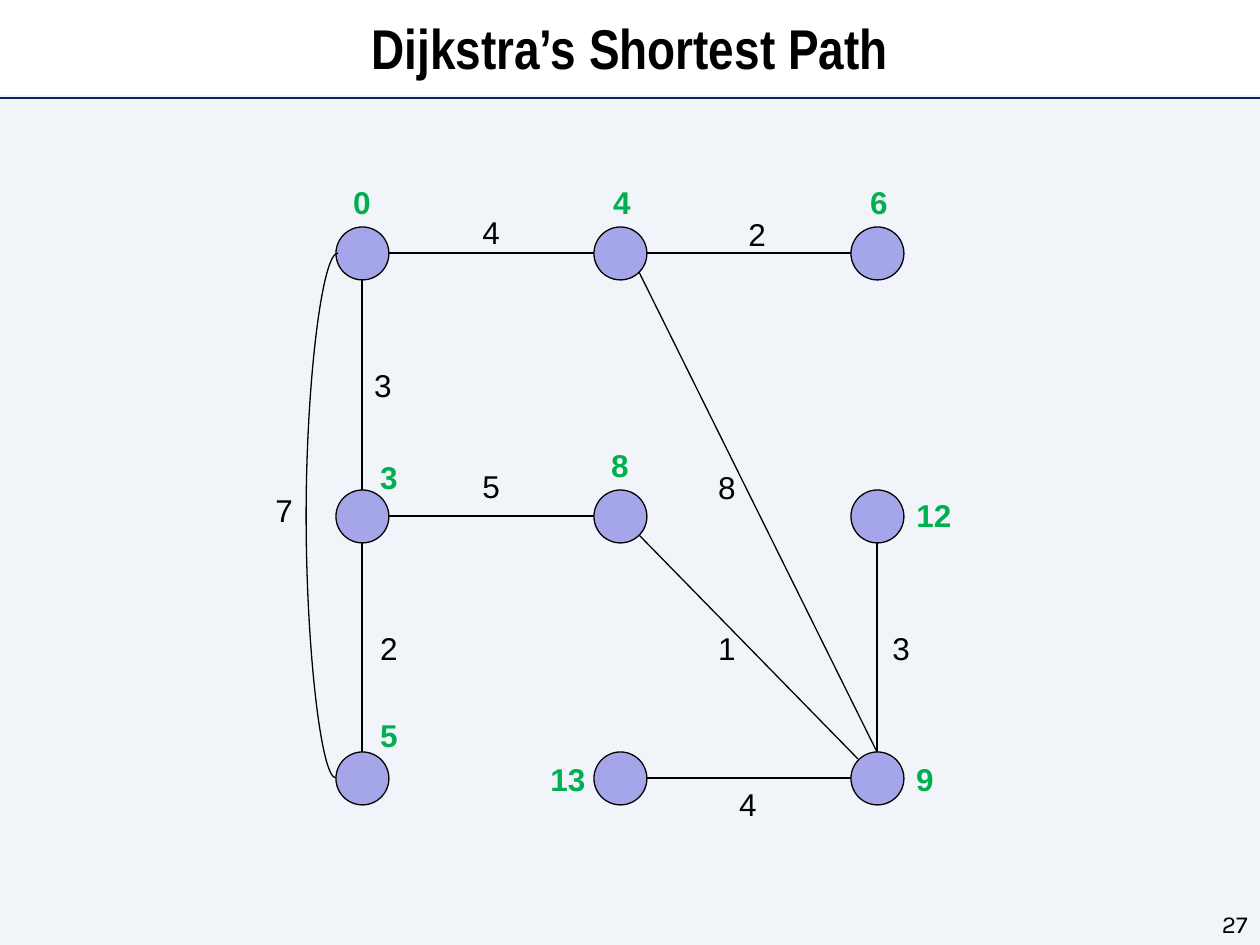
from dataclasses import dataclass

from lxml import etree
from pptx import Presentation
from pptx.dml.color import RGBColor
from pptx.enum.shapes import MSO_CONNECTOR, MSO_SHAPE
from pptx.enum.text import MSO_ANCHOR, MSO_AUTO_SIZE, PP_ALIGN
from pptx.oxml.ns import qn
from pptx.util import Emu, Pt

STRAIGHT, CURVE = MSO_CONNECTOR.STRAIGHT, MSO_CONNECTOR.CURVE
OVAL = MSO_SHAPE.OVAL
MIDDLE = MSO_ANCHOR.MIDDLE
CENTER, RIGHT = PP_ALIGN.CENTER, PP_ALIGN.RIGHT
FIT_SHAPE, NO_FIT = MSO_AUTO_SIZE.SHAPE_TO_FIT_TEXT, MSO_AUTO_SIZE.NONE

EMU_PER_PX = 914400 / 126
PAGE_SIZE = (1260, 945)
COLUMNS = (362, 620, 877)
ROWS = (253, 516, 778)
NODE_SIZE = 53
LABEL_HEIGHT = 50
SIDES = {
    "top": (0, -26), "bottom": (0, 26), "left": (-26, 0), "right": (26, 0),
    "top left": (-19, -19), "bottom right": (19, 19),
}
EDGES = (
    ((0, 0), "right", (1, 0), "left"),
    ((0, 1), "right", (1, 1), "left"),
    ((0, 0), "bottom", (0, 1), "top"),
    ((0, 1), "bottom", (0, 2), "top"),
    ((1, 0), "right", (2, 0), "left"),
    ((2, 1), "bottom", (2, 2), "top"),
    ((1, 1), "bottom right", (2, 2), "top left"),
    ((1, 0), "bottom right", (2, 2), "top"),
    ((1, 2), "right", (2, 2), "left"),
)
WEIGHTS = (
    ("4", 491, 232), ("5", 491, 486), ("3", 383, 385), ("2", 389, 648),
    ("7", 284, 510), ("1", 727, 648), ("8", 727, 487), ("2", 757, 234),
    ("3", 901, 648), ("4", 748, 804),
)
DISTANCES = (
    ("0", 362, 202), ("5", 389, 735), ("3", 389, 477), ("4", 622, 202),
    ("8", 620, 465), ("6", 879, 202), ("9", 925, 779), ("13", 568, 779),
    ("12", 934, 515),
)


@dataclass(frozen=True)
class Theme:
    """Colours, fonts and sizes of the slide."""

    background: RGBColor = RGBColor.from_string("F1F5FA")
    band: RGBColor = RGBColor.from_string("FFFFFF")
    rule: RGBColor = RGBColor.from_string("002469")
    ink: RGBColor = RGBColor.from_string("000000")
    node: RGBColor = RGBColor.from_string("A5A5E9")
    distance: RGBColor = RGBColor.from_string("00B050")
    title_font: str = "Arial Narrow"
    label_font: str = "Arial"
    number_font: str = "Karla"
    title_size: int = 32
    label_size: int = 18
    number_size: int = 14
    rule_width: float = 1.5
    line_width: float = 0.75


THEME = Theme()


def px(*lengths):
    """Turn pixel lengths into EMU."""
    return [Emu(round(length * EMU_PER_PX)) for length in lengths]


def write(shape, text, font, size, color, bold=False, align=CENTER):
    """Put one formatted paragraph into a shape."""
    para = shape.text_frame.paragraphs[0]
    para.text = text
    para.alignment = align
    para.font.name = font
    para.font.size = Pt(size)
    para.font.color.rgb = color
    para.font.bold = bold


def add_title(page, text):
    """Fill the title placeholder as a band across the top."""
    title = page.shapes.title
    title.left, title.top, title.width, title.height = px(0, 0, PAGE_SIZE[0], 95)
    title.fill.solid()
    title.fill.fore_color.rgb = THEME.band
    title.text_frame.vertical_anchor = MIDDLE
    title.text_frame.auto_size = NO_FIT
    write(title, text, THEME.title_font, THEME.title_size, THEME.ink, bold=True)


def add_line(page, start, end, color=THEME.ink, width=THEME.line_width, kind=STRAIGHT):
    """Draw a connector between two points."""
    line = page.shapes.add_connector(kind, *px(*start, *end))
    line.line.color.rgb = color
    line.line.width = Pt(width)
    etree.SubElement(line._element.spPr, qn("a:effectLst"))
    return line


def add_curve(page, start, end, bend):
    """Draw a curved connector that swings out by a multiple of its width."""
    curve = add_line(page, start, end, kind=CURVE)
    geometry = curve._element.spPr.find(qn("a:prstGeom"))
    guides = geometry.find(qn("a:avLst"))
    etree.SubElement(guides, qn("a:gd"), name="adj1", fmla=f"val {bend * 100000}")


def add_node(page, x, y):
    """Draw a graph node around its centre."""
    radius = NODE_SIZE // 2
    node = page.shapes.add_shape(OVAL, *px(x - radius, y - radius, NODE_SIZE, NODE_SIZE))
    node.shadow.inherit = False
    node.fill.solid()
    node.fill.fore_color.rgb = THEME.node
    node.line.color.rgb = THEME.ink
    node.line.width = Pt(THEME.line_width)


def add_label(page, text, x, y, color=THEME.ink, bold=False):
    """Place a number around its centre."""
    width = 26 + 17 * len(text)
    box = page.shapes.add_textbox(*px(x - width / 2, y - LABEL_HEIGHT / 2, width, LABEL_HEIGHT))
    box.text_frame.word_wrap = False
    box.text_frame.auto_size = FIT_SHAPE
    write(box, text, THEME.label_font, THEME.label_size, color, bold)


def add_page_number(page, text):
    """Place the page number in the bottom right corner."""
    box = page.shapes.add_textbox(*px(1197, 903, 63, 42))
    box.text_frame.word_wrap = True
    write(box, text, THEME.number_font, THEME.number_size, THEME.ink, align=RIGHT)


def node_side(cell, side):
    """Give the point on a node's rim at the named side."""
    column, row = cell
    dx, dy = SIDES[side]
    return COLUMNS[column] + dx, ROWS[row] + dy


def main():
    """Build the slide and save it."""
    deck = Presentation()
    deck.slide_width, deck.slide_height = px(*PAGE_SIZE)
    page = deck.slides.add_slide(deck.slide_layouts[5])
    page.background.fill.solid()
    page.background.fill.fore_color.rgb = THEME.background
    add_line(page, (0, 98), (PAGE_SIZE[0], 98), THEME.rule, THEME.rule_width)
    add_title(page, "Dijkstra’s Shortest Path")
    add_page_number(page, "27")
    for y in ROWS:
        for x in COLUMNS:
            add_node(page, x, y)
    for first, first_side, second, second_side in EDGES:
        add_line(page, node_side(first, first_side), node_side(second, second_side))
    add_curve(page, (338, ROWS[0]), (336, ROWS[2]), bend=16)
    for text, x, y in WEIGHTS:
        add_label(page, text, x, y)
    for text, x, y in DISTANCES:
        add_label(page, text, x, y, THEME.distance, bold=True)
    deck.save("out.pptx")


if __name__ == "__main__":
    main()
